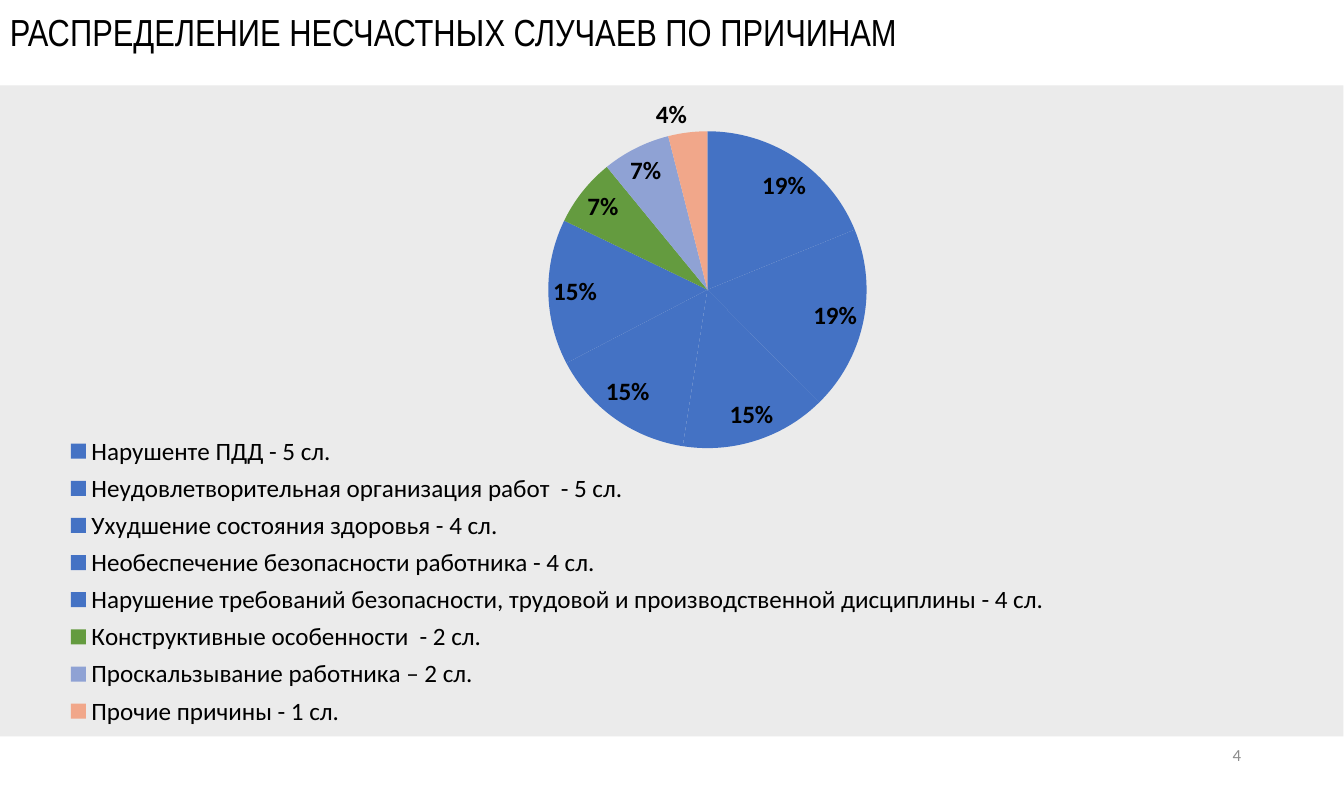
from lxml.etree import SubElement
from pptx import Presentation
from pptx.chart.data import CategoryChartData as Data
from pptx.dml.color import RGBColor as Rgb
from pptx.enum.chart import XL_CHART_TYPE as Kind, XL_LABEL_POSITION as Spot
from pptx.enum.chart import XL_LEGEND_POSITION as Side
from pptx.enum.shapes import MSO_SHAPE as Form
from pptx.enum.text import MSO_ANCHOR as Anchor, PP_ALIGN as Align
from pptx.oxml.ns import qn
from pptx.util import Pt

HUES = {
    "ink": "000000", "panel": "EBEBEB", "page": "8C8C8C",
    "blue": "4472C4", "green": "649B3F", "lilac": "8FA2D4", "peach": "F1A78A",
}

# Cause, share, slice colour
CAUSES = [
    ("Нарушенте ПДД - 5 сл.", 19, "blue"),
    ("Неудовлетворительная организация работ  - 5 сл.", 19, "blue"),
    ("Ухудшение состояния здоровья - 4 сл.", 15, "blue"),
    ("Необеспечение безопасности работника - 4 сл.", 15, "blue"),
    ("Нарушение требований безопасности, трудовой и производственной дисциплины - 4 сл. ", 15, "blue"),
    ("Конструктивные особенности  - 2 сл.", 7, "green"),
    ("Проскальзывание работника – 2 сл.", 7, "lilac"),
    ("Прочие причины - 1 сл.", 4, "peach"),
]


class Deck:
    def __init__(self, wide, high):
        self.prs = Presentation()
        self.prs.slide_width, self.prs.slide_height = Pt(wide), Pt(high)
        self.slide = self.prs.slides.add_slide(self.prs.slide_layouts[6])

    def hue(self, name):
        return Rgb.from_string(HUES[name])

    def style(self, font, face, size, hue, bold=False):
        font.name, font.size, font.bold = face, Pt(size), bold
        font.color.rgb = self.hue(hue)

    def panel(self, box, hue):
        shape = self.slide.shapes.add_shape(Form.RECTANGLE, *map(Pt, box))
        shape.shadow.inherit = False
        shape.fill.solid()
        shape.fill.fore_color.rgb = self.hue(hue)
        shape.line.fill.background()

    def text(self, box, words, face, size, hue, align=Align.LEFT, anchor=Anchor.TOP):
        frame = self.slide.shapes.add_textbox(*map(Pt, box)).text_frame
        frame.word_wrap = True
        frame.vertical_anchor = anchor
        para = frame.paragraphs[0]
        para.alignment = align
        run = para.add_run()
        run.text = words
        self.style(run.font, face, size, hue)

    def place(self, part, index, box, inner=False):
        """Fix a chart part at fractions of the chart's size."""
        for old in part.findall(qn("c:layout")):
            part.remove(old)
        layout = SubElement(part, qn("c:layout"))
        part.insert(index, layout)
        manual = SubElement(layout, qn("c:manualLayout"))
        pairs = [("layoutTarget", "inner")] if inner else []
        pairs += [("xMode", "edge"), ("yMode", "edge"), *zip("xywh", box)]
        for tag, val in pairs:
            SubElement(manual, qn("c:" + tag)).set("val", str(val))

    def pie(self, box, rows, face, size, plot_box, key_box):
        data = Data()
        data.categories = [row[0] for row in rows]
        data.add_series("Series 1", [row[1] for row in rows])
        chart = self.slide.shapes.add_chart(Kind.PIE, *map(Pt, box), data).chart
        chart.has_title = False
        self.style(chart.font, face, size, "ink")

        # Slices
        plot = chart.plots[0]
        plot.vary_by_categories = True
        for i, row in enumerate(rows):
            point = plot.series[0].points[i].format
            point.fill.solid()
            point.fill.fore_color.rgb = self.hue(row[2])
            point.line.fill.background()

        # Percent labels
        labels = plot.series[0].data_labels
        labels.show_percentage, labels.show_value = True, False
        labels.number_format, labels.number_format_is_linked = "0%", False
        labels.position = Spot.BEST_FIT
        self.style(labels.font, face, size, "ink", True)

        # Legend and plot places
        chart.has_legend = True
        key = chart.legend
        key.position = Side.TOP
        key.include_in_layout = False
        self.style(key.font, face, size, "ink")
        self.place(key._element, 1, key_box)
        area = plot._element.getparent()
        self.place(area, 0, plot_box, inner=True)

    def save(self):
        self.prs.save("out.pptx")


def main():
    deck = Deck(963.78, 566.93)
    # Backdrop and title
    deck.panel((0, 61.2, 963.4, 466.6), "panel")
    deck.text((0, 2.9, 987.8, 40.3), "РАСПРЕДЕЛЕНИЕ НЕСЧАСТНЫХ СЛУЧАЕВ ПО ПРИЧИНАМ",
              "Arial Narrow", 27, "ink")
    # Page number
    deck.text((680.4, 525.6, 216.7, 30.2), "4", "Calibri", 12.1, "page",
              Align.RIGHT, Anchor.MIDDLE)
    # Causes
    deck.pie((37.4, 69.1, 878.4, 456.5), CAUSES, "Calibri", 18,
             (0.07, 0.05, 0.93, 0.5), (0.01, 0.52, 0.81, 0.48))
    deck.save()


if __name__ == "__main__":
    main()
